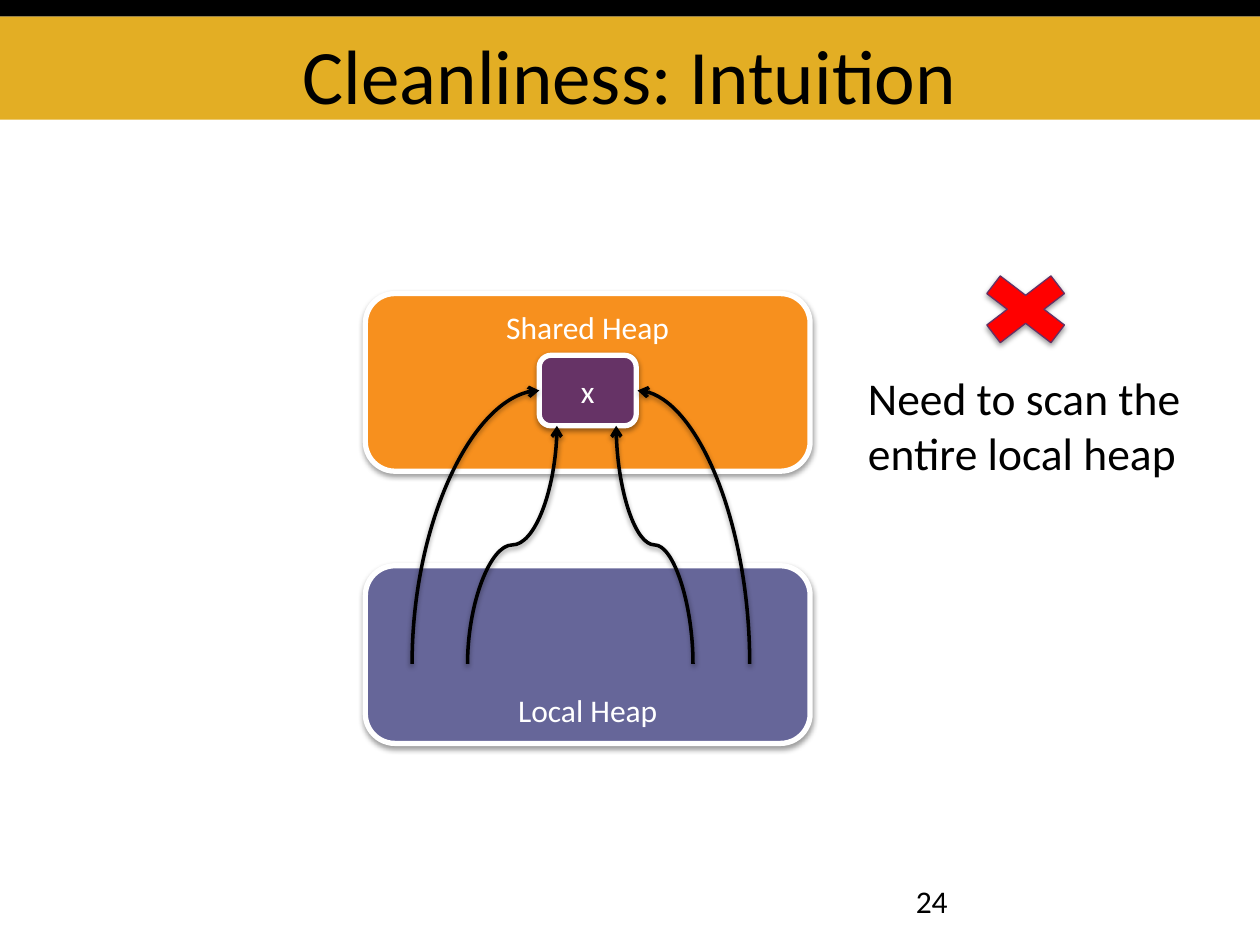
from lxml import etree
from pptx import Presentation
from pptx import util as u
from pptx.dml import color
from pptx.enum import shapes, text
from pptx.oxml import ns

CELL = u.Inches(1)  # the slide is a grid of 10 columns by 7.5 rows
COLUMNS, ROWS = 10, 7.5
SHAPE = shapes.MSO_SHAPE
ANCHOR = text.MSO_ANCHOR
CENTER = text.PP_ALIGN.CENTER
hex_color = color.RGBColor.from_string


def draw(kind, box, fill, line=None, width=0):
    """Add a filled preset shape; box is left, top, columns, rows."""
    shape = slide.shapes.add_shape(kind, *[round(n * CELL) for n in box])
    shape.shadow.inherit = False
    shape.fill.solid()
    shape.fill.fore_color.rgb = hex_color(fill)
    if line:
        shape.line.color.rgb = hex_color(line)
        shape.line.width = u.Pt(width)
    else:
        shape.line.fill.background()
    return shape


def write(target, lines, size=18, ink="000000", align=text.PP_ALIGN.LEFT,
          anchor=ANCHOR.TOP, wrap=True):
    """Write lines into a shape, or into a new text box when target is a box."""
    if isinstance(target, tuple):
        target = slide.shapes.add_textbox(*[round(n * CELL) for n in target])
    frame = target.text_frame
    frame.word_wrap = wrap
    frame.vertical_anchor = anchor
    frame.text = lines
    for paragraph in frame.paragraphs:
        paragraph.alignment = align
        paragraph.font.name = "Calibri"
        paragraph.font.size = u.Pt(size)
        paragraph.font.color.rgb = hex_color(ink)
    return target


presentation = Presentation()
presentation.slide_width = round(COLUMNS * CELL)
presentation.slide_height = round(ROWS * CELL)
slide = presentation.slides.add_slide(presentation.slide_layouts[6])

# Title band and page number
draw(SHAPE.RECTANGLE, (0, 0.13, COLUMNS, 0.82), "E3AE24")
draw(SHAPE.RECTANGLE, (0, 0, COLUMNS, 0.13), "000000")
title = write((0.5, 0.13, 9, 0.82), "Cleanliness: Intuition", size=44,
              align=CENTER, anchor=ANCHOR.BOTTOM)
title.text_frame.margin_bottom = 0
write((7.17, 6.95, 2.33, 0.4), "24")

# Heaps and the shared object
shadowed = []
for label, box, fill, anchor in (
    ("Shared Heap", (2.9, 2.33, 3.53, 1.41), "F7901E", ANCHOR.TOP),
    ("Local Heap", (2.9, 4.49, 3.53, 1.41), "666699", ANCHOR.BOTTOM),
    ("x", (4.28, 2.82, 0.77, 0.56), "663366", ANCHOR.MIDDLE),
):
    block = draw(SHAPE.ROUNDED_RECTANGLE, box, fill, line="FFFFFF", width=3)
    write(block, label, ink="FFFFFF", align=CENTER, anchor=anchor)
    shadowed.append(block)

# References from the local heap up to x: outer ones bend once, inner ones twice
START_ROW = 5.27
for start, end, end_row, preset in (
    (5.95, 5.06, 3.1, "curvedConnector2"),
    (5.5, 4.89, 3.38, "curvedConnector3"),
    (3.27, 4.28, 3.1, "curvedConnector2"),
    (3.71, 4.42, 3.38, "curvedConnector3"),
):
    # A quarter turn swaps the width and height around the same centre
    length, breadth = START_ROW - end_row, abs(end - start)
    middle, centre_row = (start + end) / 2, (START_ROW + end_row) / 2
    corners = (middle - length / 2, centre_row - breadth / 2,
               middle + length / 2, centre_row + breadth / 2)
    arrow = slide.shapes.add_connector(shapes.MSO_CONNECTOR.CURVE,
                                       *[round(n * CELL) for n in corners])
    arrow.line.color.rgb = hex_color("000000")
    arrow.line.width = u.Pt(2)
    properties = arrow._element.spPr
    properties.find(ns.qn("a:prstGeom")).set("prst", preset)
    frame = properties.find(ns.qn("a:xfrm"))
    frame.set("flipV", "1")
    if end > start:
        frame.set("flipH", "1")
    frame.set("rot", str((90 if end > start else 270) * 60000))
    etree.SubElement(properties.find(ns.qn("a:ln")), ns.qn("a:tailEnd"), type="arrow")
    etree.SubElement(properties, ns.qn("a:effectLst"))
    shadowed.append(arrow)

# Drawback
cross = draw(SHAPE.MATH_MULTIPLY, (7.65, 2.08, 0.98, 0.75), "FF0000",
             line="653165", width=0.75)
shadowed.append(cross)
note = write((6.79, 2.89, 2.71, 0.98), "Need to scan the\nentire local heap",
             size=26, wrap=False)
slide.shapes.add_group_shape([cross, note])

# Soft shadow straight below
for shape in shadowed:
    effects = shape._element.spPr.find(ns.qn("a:effectLst"))
    shadow = etree.SubElement(effects, ns.qn("a:outerShdw"), blurRad=str(u.Pt(3.1)),
                              dist=str(u.Pt(1.6)), dir=str(90 * 60000), rotWithShape="0")
    black = etree.SubElement(shadow, ns.qn("a:srgbClr"), val="000000")
    etree.SubElement(black, ns.qn("a:alpha"), val="38000")

presentation.save("out.pptx")
